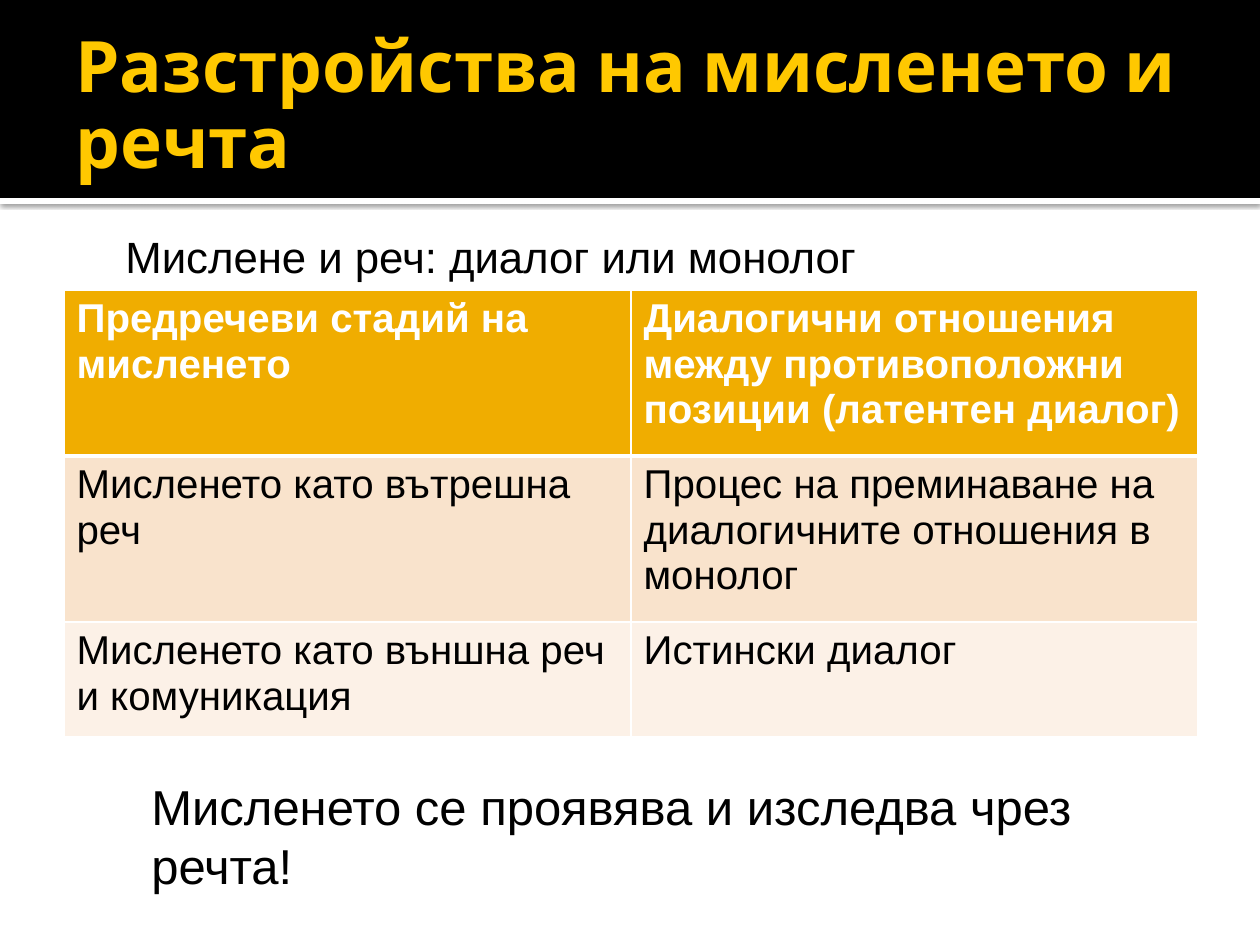
from lxml.etree import SubElement
from pptx import Presentation
from pptx.dml.color import RGBColor
from pptx.enum.shapes import MSO_SHAPE
from pptx.enum.text import MSO_ANCHOR
from pptx.oxml import parse_xml
from pptx.oxml.ns import nsdecls, qn
from pptx.util import Emu, Pt

COLORS = {
    "white": "FFFFFF",
    "black": "000000",
    "title": "FFC800",
    "header": "F0AD00",
    "odd_row": "F9E3CC",
    "even_row": "FCF1E7",
}
ROWS = [
    ("Предречеви стадий на мисленето",
     "Диалогични отношения между противоположни позиции (латентен диалог)"),
    ("Мисленето като вътрешна реч",
     "Процес на преминаване на диалогичните отношения в монолог"),
    ("Мисленето като външна реч и комуникация", "Истински диалог"),
]


def emu(px):
    return Emu(round(px * 914400 / 126))


def color(name):
    return RGBColor.from_string(COLORS[name])


class SlideBuilder:
    """Holds the text style and the page, and adds each kind of element."""

    def __init__(self, page, font="Arial"):
        self.page = page
        self.font = font

    def style(self, text_frame, size, ink="black", bold=False, font=None):
        for para in text_frame.paragraphs:
            for span in para.runs:
                span.font.name = font or self.font
                span.font.size = Pt(size)
                span.font.bold = bold
                span.font.color.rgb = color(ink)

    def band(self, top, height, fill, shadow=False):
        box = self.page.shapes.add_shape(
            MSO_SHAPE.RECTANGLE, 0, emu(top), emu(1260), emu(height))
        box.shadow.inherit = False
        box.fill.solid()
        box.fill.fore_color.rgb = color(fill)
        box.line.fill.background()
        if shadow:
            effects = box._element.spPr.find(qn("a:effectLst"))
            effects.append(parse_xml(
                f'<a:outerShdw {nsdecls("a")} blurRad="{Pt(2.5)}" dist="{Pt(0.8)}" '
                f'dir="5400000" algn="tl" rotWithShape="0">'
                f'<a:srgbClr val="{COLORS["black"]}"><a:alpha val="60000"/></a:srgbClr>'
                f'</a:outerShdw>'))

    def text(self, bounds, content, size, **style):
        box = self.page.shapes.add_textbox(*map(emu, bounds))
        frame = box.text_frame
        frame.word_wrap = True
        frame.text = content
        self.style(frame, size, **style)
        return frame

    def border(self, cell, bottom):
        properties = cell._tc.get_or_add_tcPr()
        for side, width in (("L", 1), ("R", 1), ("T", 1), ("B", bottom)):
            line = SubElement(properties, qn(f"a:ln{side}"), w=str(Pt(width)))
            fill = SubElement(line, qn("a:solidFill"))
            SubElement(fill, qn("a:srgbClr"), val=COLORS["white"])

    def table(self, left, top, column_width, row_heights, rows, fills):
        table = self.page.shapes.add_table(
            len(rows), len(rows[0]), emu(left), emu(top),
            emu(column_width * len(rows[0])), emu(sum(row_heights))).table
        for column in table.columns:
            column.width = emu(column_width)
        for index, (height, contents, fill) in enumerate(zip(row_heights, rows, fills)):
            header = index == 0
            table.rows[index].height = emu(height)
            for cell, content in zip(table.rows[index].cells, contents):
                self.border(cell, 3 if header else 1)
                cell.fill.solid()
                cell.fill.fore_color.rgb = color(fill)
                cell.text_frame.text = content
                self.style(cell.text_frame, 23, "white" if header else "black", header)


def main():
    deck = Presentation()
    deck.slide_width, deck.slide_height = emu(1260), emu(945)
    builder = SlideBuilder(deck.slides.add_slide(deck.slide_layouts[6]))
    builder.band(198, 6, "white", shadow=True)
    builder.band(0, 198, "black")
    builder.table(64, 290, 567, (166, 166, 115), ROWS, ("header", "odd_row", "even_row"))
    builder.text((113, 224, 1012, 66), "Мислене и реч: диалог или монолог", 25)
    builder.text((139, 770, 964, 131), "Мисленето се проявява и изследва чрез речта!", 28)
    title = builder.text((63, 21, 1134, 173), "Разстройства на мисленето и речта",
                         40.5, ink="title", bold=True, font="Cabin")
    title.vertical_anchor = MSO_ANCHOR.MIDDLE
    title.margin_right = Pt(3.6)
    title.paragraphs[0].line_spacing = 0.9
    deck.save("out.pptx")


if __name__ == "__main__":
    main()
